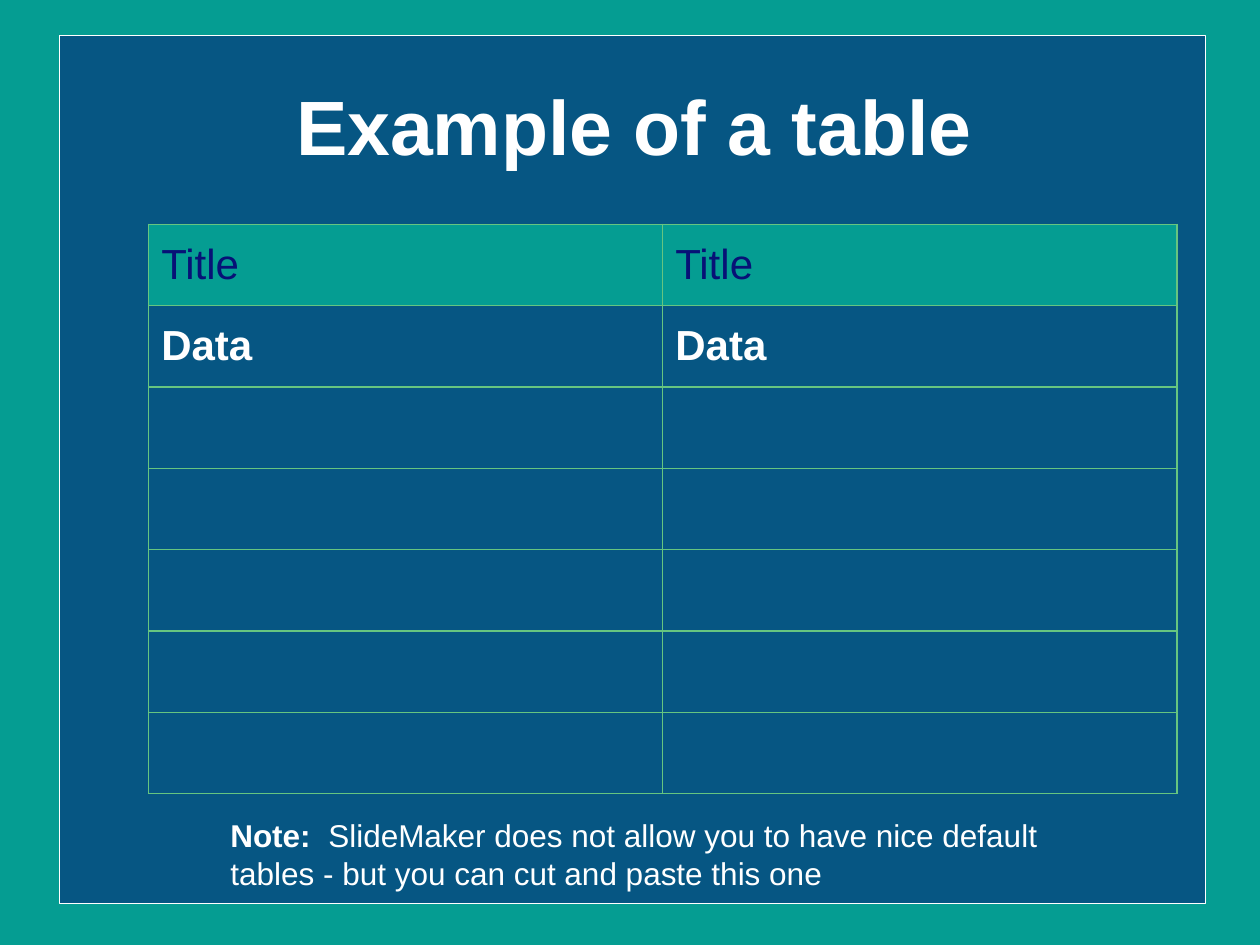
import pptx
import pptx.dml.color
import pptx.enum.shapes
import pptx.enum.text
import pptx.oxml
import pptx.oxml.ns
import pptx.util
from dataclasses import dataclass

Inches = pptx.util.Inches
Pt = pptx.util.Pt
MIDDLE = pptx.enum.text.MSO_ANCHOR.MIDDLE


@dataclass(frozen=True)
class Theme:
    font: str = "Arial"
    teal: str = "059D92"
    navy: str = "071176"
    white: str = "FFFFFF"
    green: str = "66C580"
    title_size: int = 44
    table_size: int = 24
    note_size: int = 18


THEME = Theme()


def rgb(color):
    return pptx.dml.color.RGBColor.from_string(color)


def add_run(paragraph, text, size, color=THEME.white, bold=False):
    run = paragraph.add_run()
    run.text = text
    run.font.name = THEME.font
    run.font.size = Pt(size)
    run.font.bold = bold
    run.font.color.rgb = rgb(color)


def add_text_frame(slide, left, top, width, height):
    box = slide.shapes.add_textbox(
        Inches(left), Inches(top), Inches(width), Inches(height))
    box.text_frame.word_wrap = True
    return box.text_frame


def add_panel(slide):
    panel = slide.shapes.add_shape(
        pptx.enum.shapes.MSO_SHAPE.RECTANGLE,
        Inches(0.47), Inches(0.28), Inches(9.1), Inches(6.89))
    panel.shadow.inherit = False
    panel.fill.solid()
    panel.fill.fore_color.rgb = rgb(THEME.navy)
    panel.line.color.rgb = rgb(THEME.white)
    panel.line.width = Pt(0.75)
    # Half-transparent fill
    fill_color = panel.fill._xPr.find(".//" + pptx.oxml.ns.qn("a:srgbClr"))
    fill_color.append(pptx.oxml.parse_xml(
        f'<a:alpha {pptx.oxml.ns.nsdecls("a")} val="50000"/>'))


def add_title(slide):
    title = add_text_frame(slide, 0.5, 0.32, 9.07, 1.34)
    title.vertical_anchor = MIDDLE
    heading = title.paragraphs[0]
    heading.alignment = pptx.enum.text.PP_ALIGN.CENTER
    add_run(heading, "Example of a table", THEME.title_size, bold=True)


def set_borders(cell):
    properties = cell._tc.get_or_add_tcPr()
    # Borders come before the fill in the cell properties
    for position, side in enumerate(("lnL", "lnR", "lnT", "lnB")):
        properties.insert(position, pptx.oxml.parse_xml(
            f'<a:{side} {pptx.oxml.ns.nsdecls("a")} w="{Pt(1)}"><a:solidFill>'
            f'<a:srgbClr val="{THEME.green}"/></a:solidFill></a:{side}>'))


def add_data_table(slide, rows, columns):
    table = slide.shapes.add_table(
        rows, columns,
        Inches(1.18), Inches(1.78), Inches(8.16), Inches(4.52)).table
    table.first_row = False
    table.horz_banding = False
    for cell in table.iter_cells():
        cell.vertical_anchor = MIDDLE
        cell.fill.background()
        set_borders(cell)

    # Heading row and first data row
    for column in range(columns):
        heading, data = table.cell(0, column), table.cell(1, column)
        heading.fill.solid()
        heading.fill.fore_color.rgb = rgb(THEME.teal)
        add_run(heading.text_frame.paragraphs[0], "Title",
                THEME.table_size, THEME.navy)
        add_run(data.text_frame.paragraphs[0], "Data",
                THEME.table_size, bold=True)


def add_note(slide):
    note = add_text_frame(slide, 1.73, 6.43, 6.77, 0.7)
    sentence = note.paragraphs[0]
    add_run(sentence, "Note:  ", THEME.note_size, bold=True)
    add_run(sentence,
            "SlideMaker does not allow you to have nice default tables"
            " - but you can cut and paste this one", THEME.note_size)


def main():
    deck = pptx.Presentation()
    deck.slide_width, deck.slide_height = Inches(10), Inches(7.5)
    slide = deck.slides.add_slide(deck.slide_layouts[6])

    # Backdrop
    slide.background.fill.solid()
    slide.background.fill.fore_color.rgb = rgb(THEME.teal)
    add_panel(slide)

    # Content
    add_title(slide)
    add_data_table(slide, rows=7, columns=2)
    add_note(slide)
    deck.save("out.pptx")


if __name__ == "__main__":
    main()
